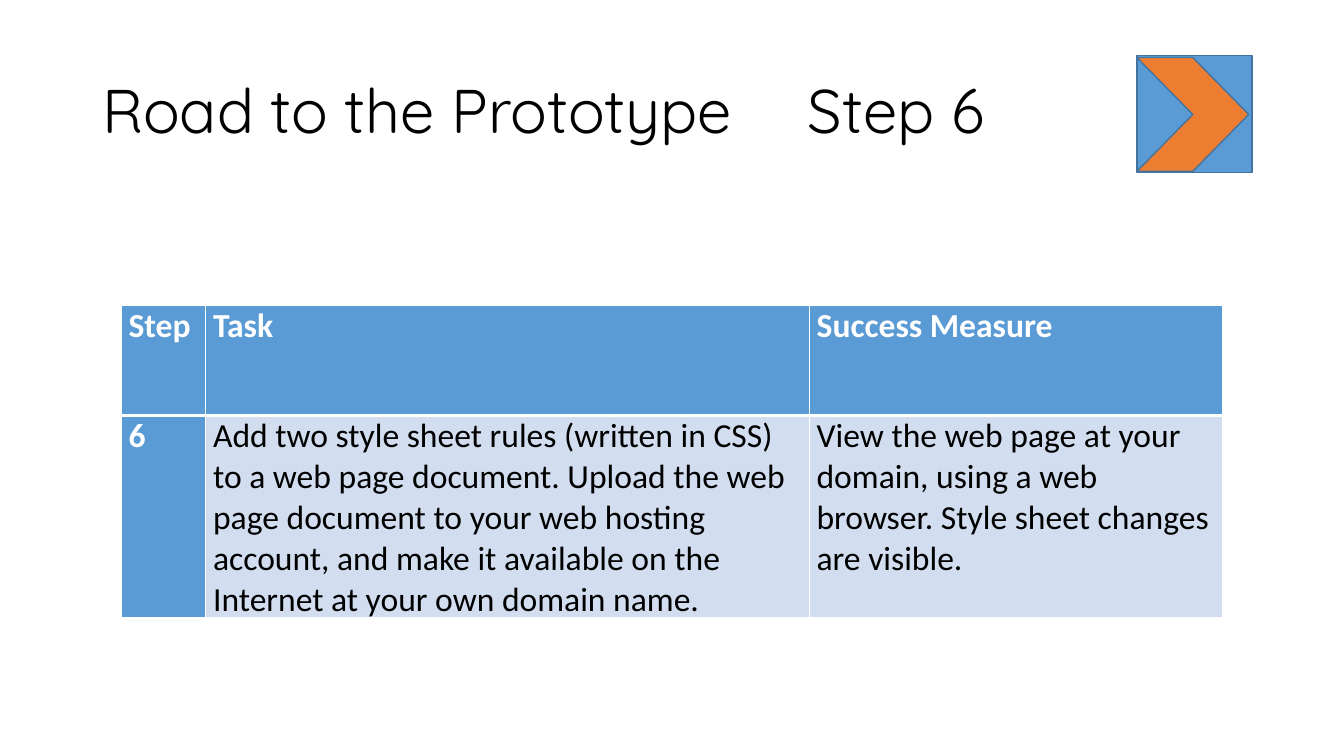
import pptx
import pptx.dml.color
import pptx.enum.shapes
import pptx.enum.text
import pptx.oxml.ns
import pptx.util
import lxml.etree

Cm = pptx.util.Cm
Pt = pptx.util.Pt
SHAPE = pptx.enum.shapes.MSO_SHAPE
ANCHOR = pptx.enum.text.MSO_ANCHOR

COLORS = {
    "blue": "5B9BD5",
    "orange": "ED7D31",
    "outline": "43739E",
    "pale": "D2DEEF",
    "white": "FFFFFF",
    "black": "000000",
}


def rgb(name):
    return pptx.dml.color.RGBColor.from_string(COLORS[name])


def add_border(cell, side, points):
    properties = cell._tc.get_or_add_tcPr()
    qn = pptx.oxml.ns.qn
    line = lxml.etree.SubElement(properties, qn(f"a:ln{side}"), w=str(Pt(points)))
    fill = lxml.etree.SubElement(line, qn("a:solidFill"))
    lxml.etree.SubElement(fill, qn("a:srgbClr"), val=COLORS["white"])


presentation = pptx.Presentation()
presentation.slide_width = Cm(33.87)
presentation.slide_height = Cm(19.05)
slide = presentation.slides.add_slide(presentation.slide_layouts[6])

# Step button
button = slide.shapes.add_group_shape()
for kind, color, left, top, width, height in [
    (SHAPE.ACTION_BUTTON_CUSTOM, "blue", 28.65, 1.4, 2.9, 2.95),
    (SHAPE.CHEVRON, "orange", 28.65, 1.45, 2.82, 2.87),
]:
    shape = button.shapes.add_shape(kind, Cm(left), Cm(top), Cm(width), Cm(height))
    shape.shadow.inherit = False
    shape.fill.solid()
    shape.fill.fore_color.rgb = rgb(color)
    shape.line.color.rgb = rgb("outline")
    shape.line.width = Pt(1)

# Title
title = slide.shapes.add_textbox(Cm(2.33), Cm(1.02), Cm(29.21), Cm(3.68))
title.text_frame.word_wrap = True
title.text_frame.vertical_anchor = ANCHOR.MIDDLE
paragraph = title.text_frame.paragraphs[0]
paragraph.line_spacing = 0.9
run = paragraph.add_run()
run.text = "Road to the Prototype\t\tStep 6"
for name, value in {"name": "Quicksand", "size": Pt(44)}.items():
    setattr(run.font, name, value)
run.font.color.rgb = rgb("black")

# Task table
rows = [
    ["Step", "Task", "Success Measure"],
    [
        "6",
        "Add two style sheet rules (written in CSS) to a web page document. "
        "Upload the web page document to your web hosting account, and make it "
        "available on the Internet at your own domain name.",
        "View the web page at your domain, using a web browser. "
        "Style sheet changes are visible.",
    ],
]
column_widths = [2.13, 15.21, 10.41]
row_heights = [2.77, 4.85]
table = slide.shapes.add_table(
    len(rows), len(column_widths), Cm(3.05), Cm(7.7),
    Cm(sum(column_widths)), Cm(sum(row_heights)),
).table
table.horz_banding = False
for column, width in zip(table.columns, column_widths):
    column.width = Cm(width)
for row, height in zip(table.rows, row_heights):
    row.height = Cm(height)

cell_format = {
    "margin_left": Cm(0.19),
    "margin_right": Cm(0.19),
    "margin_top": 0,
    "margin_bottom": 0,
    "vertical_anchor": ANCHOR.TOP,
}
for row_index, texts in enumerate(rows):
    for column_index, text in enumerate(texts):
        cell = table.cell(row_index, column_index)
        is_header = row_index == 0 or column_index == 0
        for name, value in cell_format.items():
            setattr(cell, name, value)
        for side in "LRTB":
            # The rule between header and body is heavier
            heavy = (row_index, side) in [(0, "B"), (1, "T")]
            add_border(cell, side, 3 if heavy else 1)
        cell.fill.solid()
        cell.fill.fore_color.rgb = rgb("blue" if is_header else "pale")
        run = cell.text_frame.paragraphs[0].add_run()
        run.text = text
        font_format = {"name": "Calibri", "size": Pt(24), "bold": is_header}
        for name, value in font_format.items():
            setattr(run.font, name, value)
        run.font.color.rgb = rgb("white" if is_header else "black")

presentation.save("out.pptx")
